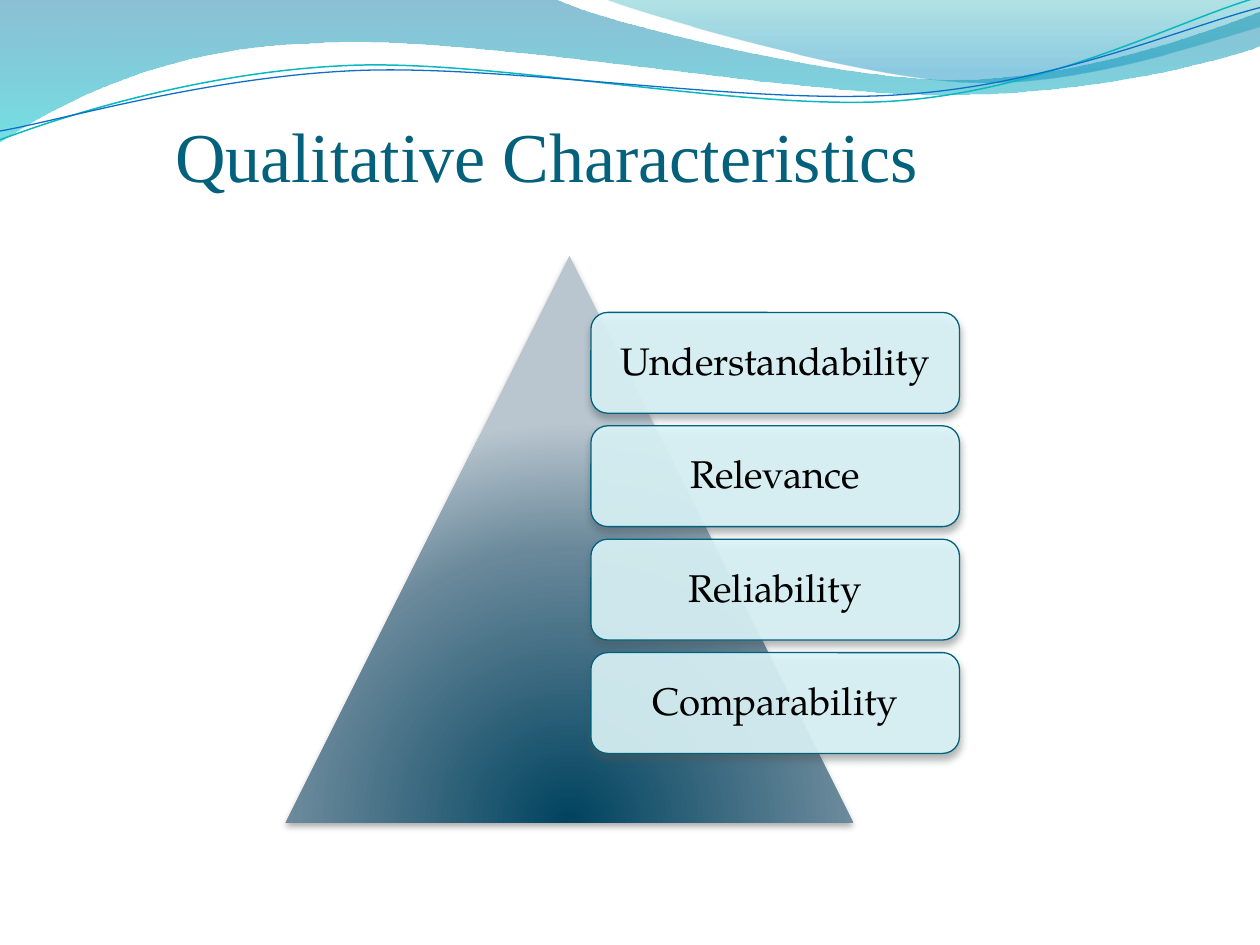
from math import cos, radians, sin

from lxml import etree
from pptx import Presentation
from pptx.dml.color import RGBColor
from pptx.enum.shapes import MSO_SHAPE
from pptx.enum.text import MSO_ANCHOR, PP_ALIGN
from pptx.oxml.ns import qn
from pptx.util import Inches, Pt

TRIANGLE, ROUNDED = MSO_SHAPE.ISOSCELES_TRIANGLE, MSO_SHAPE.ROUNDED_RECTANGLE
LEFT, CENTER = PP_ALIGN.LEFT, PP_ALIGN.CENTER
BOTTOM, MIDDLE = MSO_ANCHOR.BOTTOM, MSO_ANCHOR.MIDDLE

TITLE_COLOR = RGBColor(0x04, 0x61, 0x7B)
BOX_FILL = RGBColor(0xDB, 0xF5, 0xF9)
BLACK = RGBColor(0, 0, 0)
BOX_SHADOW = RGBColor(0x4D, 0x56, 0x58)
TEAL_LINE = RGBColor(0x0A, 0xB8, 0xBF)
BLUE_LINE = RGBColor(0x0F, 0x6F, 0xC6)

TITLE = "Qualitative Characteristics"
CHARACTERISTICS = ["Understandability", "Relevance", "Reliability", "Comparability"]

# Frame, then outline in inches: two numbers are a straight step, six a Bezier step
WAVES = [
    ((-0.01, -0.01, 10.02, 1.14),
     [(0, 0), (4.4, -0.01), (4.76, 0.17, 6.64, 0.63, 7.58, 0.63),
      (8.53, 0.63, 9.58, 0.26, 10, 0.09), (10.01, 0.36),
      (9.83, 0.44, 8.7, 0.76, 7.46, 0.75), (6.22, 0.75, 3.82, 0.28, 2.57, 0.34),
      (1.29, 0.36, 0.46, 0.83, -0.01, 1.13), (0, 0)],
     [(0, RGBColor(0x00, 0x74, 0xA1), 45), (100, RGBColor(0x00, 0xC6, 0xCF), 55)]),
    ((4.79, -0.01, 5.21, 0.7),
     [(4.79, -0.01), (5.09, 0.11, 6.82, 0.62, 7.69, 0.65),
      (8.56, 0.69, 9.61, 0.32, 10, 0.21), (10, 0), (4.79, -0.01)],
     [(0, RGBColor(0x00, 0xA1, 0xA9), 30), (80, RGBColor(0x00, 0x8B, 0xBF), 45)]),
]
WAVE_LINES = [
    ((-0.02, 0.22, 10.02, 0.71),
     [(0, 1.11), (0.48, 0.93, 1.58, 0.57, 2.77, 0.52),
      (3.95, 0.47, 5.93, 0.89, 7.13, 0.8), (8.33, 0.71, 9.38, 0.15, 9.98, -0.02)],
     TEAL_LINE, 0.85),
    ((-0.02, 0.3, 10.03, 0.58),
     [(0, 1.04), (0.47, 0.96, 1.64, 0.61, 2.83, 0.56),
      (4.03, 0.51, 5.97, 0.84, 7.17, 0.75), (8.36, 0.67, 9.41, 0.21, 10, 0.06)],
     BLUE_LINE, 0.75),
]
LINE_TILT = -2.7
PYRAMID_STOPS = [(0, RGBColor(0x00, 0x43, 0x5F), 100),
                 (68, RGBColor(0x69, 0x88, 0x9A), 100),
                 (100, RGBColor(0xB9, 0xC6, 0xCF), 100)]

# Pyramid and the boxes laid on it, sized as shares of the pyramid
PYRAMID_LEFT, PYRAMID_TOP, PYRAMID_SIZE = 2.27, 2.03, 4.5
BOX_LEFT, BOX_TOP = 4.69, 2.48
BOX_WIDTH, BOX_HEIGHT = PYRAMID_SIZE * 0.65, PYRAMID_SIZE * 8 / 45
BOX_PITCH = PYRAMID_SIZE / 5


def add_child(parent, tag, **attributes):
    child = etree.SubElement(parent, qn(tag))
    for name, value in attributes.items():
        child.set(name, str(value))
    return child


def add_color(parent, color, opacity):
    add_child(add_child(parent, "a:srgbClr", val=color), "a:alpha", val=opacity * 1000)


def set_gradient(shape, stops, radial=False):
    shape.fill.background()
    properties = shape._element.spPr
    empty_fill = properties.find(qn("a:noFill"))
    gradient = etree.Element(qn("a:gradFill"), rotWithShape="1")
    stop_list = add_child(gradient, "a:gsLst")
    for position, color, opacity in stops:
        add_color(add_child(stop_list, "a:gs", pos=position * 1000), color, opacity)
    if radial:
        circle = add_child(gradient, "a:path", path="circle")
        add_child(circle, "a:fillToRect", l=50000, t=130000, r=50000, b=-30000)
    else:
        add_child(gradient, "a:lin", ang=5400000, scaled=0)
    properties.replace(empty_fill, gradient)


def set_shadow(shape, color, opacity, blur, distance):
    shape.shadow.inherit = False
    effects = shape._element.spPr.find(qn("a:effectLst"))
    shadow = add_child(effects, "a:outerShdw", blurRad=Pt(blur), dist=Pt(distance),
                       dir=5400000, algn="ctr", rotWithShape=0)
    add_color(shadow, color, opacity)


def place(shape, left, top, width, height):
    shape.left, shape.top = Inches(left), Inches(top)
    shape.width, shape.height = Inches(width), Inches(height)


def add_outline(slide, frame, steps, close, tilt=0):
    """Draw Bezier steps inside a frame that is turned by tilt degrees."""
    left, top, width, height = frame
    cosine, sine = cos(radians(-tilt)), sin(radians(-tilt))

    def add_point(parent, x, y):
        x, y = x - left - width / 2, y - top - height / 2
        add_child(parent, "a:pt", x=Inches(x * cosine - y * sine + width / 2),
                  y=Inches(x * sine + y * cosine + height / 2))

    builder = slide.shapes.build_freeform(0, 0)
    builder.add_line_segments([(Inches(width), Inches(height))], close=False)
    shape = builder.convert_to_shape()
    place(shape, *frame)
    shape.rotation = tilt
    shape.shadow.inherit = False

    outline = shape._element.spPr.find(".//" + qn("a:path"))
    for child in list(outline):
        outline.remove(child)
    for index, step in enumerate(steps):
        tag = "a:cubicBezTo" if len(step) == 6 else "a:lnTo" if index else "a:moveTo"
        command = add_child(outline, tag)
        for x, y in zip(step[::2], step[1::2]):
            add_point(command, x, y)
    if close:
        add_child(outline, "a:close")
    return shape


def write_text(shape, text, *, size, font, color, align, anchor, margins, spacing=1.0):
    frame = shape.text_frame
    frame.word_wrap = True
    frame.vertical_anchor = anchor
    (frame.margin_left, frame.margin_top,
     frame.margin_right, frame.margin_bottom) = map(Inches, margins)
    frame.text = text
    paragraph = frame.paragraphs[0]
    paragraph.alignment = align
    paragraph.line_spacing = spacing
    run = paragraph.runs[0]
    run.font.size = Pt(size)
    run.font.name = font
    run.font.color.rgb = color


def main():
    presentation = Presentation()
    presentation.slide_width, presentation.slide_height = Inches(10), Inches(7.5)
    slide = presentation.slides.add_slide(presentation.slide_layouts[5])

    # Wave decoration
    for frame, steps, stops in WAVES:
        wave = add_outline(slide, frame, steps, close=True)
        set_gradient(wave, stops)
        wave.line.fill.background()
    for frame, steps, color, width in WAVE_LINES:
        curve = add_outline(slide, frame, steps, close=False, tilt=LINE_TILT)
        curve.fill.background()
        curve.line.color.rgb = color
        curve.line.width = Pt(width)

    # Title
    title = slide.shapes.title
    place(title, 1.39, 0.31, 8.5, 1.25)
    write_text(title, TITLE, size=40, font="Times New Roman", color=TITLE_COLOR,
               align=LEFT, anchor=BOTTOM, margins=(0, 0.05, 0, 0))

    # Pyramid
    pyramid = slide.shapes.add_shape(TRIANGLE, Inches(PYRAMID_LEFT), Inches(PYRAMID_TOP),
                                     Inches(PYRAMID_SIZE), Inches(PYRAMID_SIZE))
    set_gradient(pyramid, PYRAMID_STOPS, radial=True)
    pyramid.line.fill.background()
    set_shadow(pyramid, BLACK, 32, 3.5, 2.2)

    # Characteristic boxes
    for row, name in enumerate(CHARACTERISTICS):
        box = slide.shapes.add_shape(ROUNDED, Inches(BOX_LEFT),
                                     Inches(BOX_TOP + row * BOX_PITCH),
                                     Inches(BOX_WIDTH), Inches(BOX_HEIGHT))
        box.fill.solid()
        box.fill.fore_color.rgb = BOX_FILL
        fill_color = box._element.spPr.find(qn("a:solidFill")).find(qn("a:srgbClr"))
        add_child(fill_color, "a:alpha", val=90000)
        box.line.color.rgb = TITLE_COLOR
        box.line.width = Pt(0.75)
        set_shadow(box, BOX_SHADOW, 48, 4.5, 3)
        write_text(box, name, size=22, font="TeX Gyre Pagella", color=BLACK,
                   align=CENTER, anchor=MIDDLE, margins=(0.09,) * 4, spacing=0.9)

    presentation.save("out.pptx")


if __name__ == "__main__":
    main()
